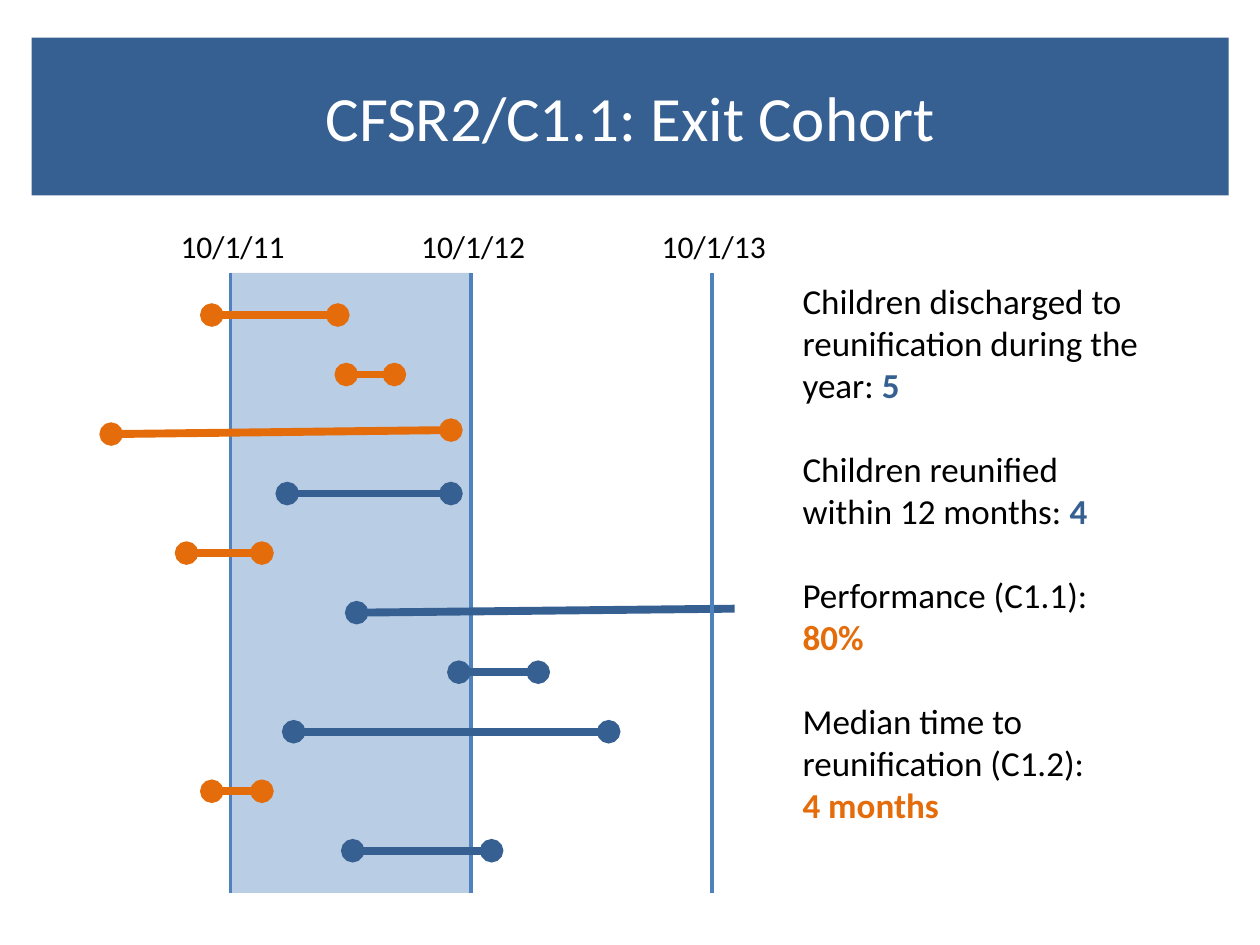
from lxml import etree
from pptx import Presentation
from pptx.dml.color import RGBColor
from pptx.enum import shapes, text
from pptx.oxml.ns import qn
from pptx.util import Cm, Pt

TITLE = "CFSR2/C1.1: Exit Cohort"
DATES = ["10/1/11", "10/1/12", "10/1/13"]

# One stay per row: start, end (cm), colour, rise at the end (cm), end is known
STAYS = [
    (4.27, 6.81, "orange", 0, True),
    (6.98, 7.95, "orange", 0, True),
    (2.24, 9.09, "orange", 0.08, True),
    (5.79, 9.09, "navy", 0, True),
    (3.76, 5.28, "orange", 0, True),
    (7.19, 14.81, "navy", 0.08, False),
    (9.25, 10.85, "navy", 0, True),
    (5.92, 12.27, "navy", 0, True),
    (4.27, 5.28, "orange", 0, True),
    (7.11, 9.91, "navy", 0, True),
]

# Label, value, value colour, starts a new group
FINDINGS = [
    ("Children discharged to reunification during the year: ", "5", "navy", False),
    ("Children reunified within 12 months: ", "4", "navy", True),
    ("Performance (C1.1): ", "80%", "orange", True),
    ("Median time to reunification (C1.2):", "", "orange", True),
    ("", "4 months", "orange", False),
]

THEME = {
    "font": "Calibri",
    "navy": RGBColor.from_string("376092"),
    "orange": RGBColor.from_string("E46C0A"),
    "band": RGBColor.from_string("B9CDE5"),
    "marker": RGBColor.from_string("4F81BD"),
    "black": RGBColor.from_string("000000"),
    "white": RGBColor.from_string("FFFFFF"),
    "title_size": Pt(36),
    "date_size": Pt(18),
    "body_size": Pt(20),
}

YEAR_LEFT, YEAR_WIDTH = 4.65, 4.85
CHART_TOP, CHART_HEIGHT = 5.5, 12.5
ROW_TOP, ROW_STEP = 6.35, 1.2
DATE_W, DATE_H = 2.64, 1.02


def set_font(target, size, color):
    target.font.name = THEME["font"]
    target.font.size = THEME[size]
    target.font.color.rgb = THEME[color]


def add_line(slide, x1, y1, x2, y2, color, width, ends=()):
    """Draw a line; ends lists the tags (headEnd, tailEnd) that get a dot."""
    line = slide.shapes.add_connector(
        shapes.MSO_CONNECTOR.STRAIGHT, Cm(x1), Cm(y1), Cm(x2), Cm(y2))
    line.line.color.rgb = THEME[color]
    line.line.width = Pt(width)
    ln = line.line._get_or_add_ln()
    for tag in ends:
        etree.SubElement(ln, qn("a:" + tag), type="oval")
    etree.SubElement(line._element.spPr, qn("a:effectLst"))


def add_title(slide):
    sp = slide.shapes.title
    sp.left, sp.top, sp.width, sp.height = Cm(0.64), Cm(0.76), Cm(24.13), Cm(3.18)
    sp.fill.solid()
    sp.fill.fore_color.rgb = THEME["navy"]
    tf = sp.text_frame
    tf.text = TITLE
    tf.vertical_anchor = text.MSO_ANCHOR.MIDDLE
    p = tf.paragraphs[0]
    p.alignment = text.PP_ALIGN.CENTER
    set_font(p, "title_size", "white")


def add_band(slide):
    sp = slide.shapes.add_shape(
        shapes.MSO_SHAPE.RECTANGLE,
        Cm(YEAR_LEFT), Cm(CHART_TOP), Cm(YEAR_WIDTH), Cm(CHART_HEIGHT))
    sp.shadow.inherit = False
    sp.fill.solid()
    sp.fill.fore_color.rgb = THEME["band"]
    sp.line.fill.background()


def add_date(slide, i):
    x = YEAR_LEFT + i * YEAR_WIDTH
    add_line(slide, x, CHART_TOP, x, CHART_TOP + CHART_HEIGHT, "marker", 2)
    box = slide.shapes.add_textbox(
        Cm(x - DATE_W / 2 + 0.04), Cm(4.45), Cm(DATE_W), Cm(DATE_H))
    tf = box.text_frame
    tf.word_wrap = False
    tf.auto_size = text.MSO_AUTO_SIZE.SHAPE_TO_FIT_TEXT
    p = tf.paragraphs[0]
    p.text = DATES[i]
    p.alignment = text.PP_ALIGN.CENTER
    set_font(p, "date_size", "black")


def add_stays(slide):
    for i, (start, end, color, rise, closed) in enumerate(STAYS):
        y = ROW_TOP + i * ROW_STEP
        ends = ("headEnd", "tailEnd") if closed else ("headEnd",)
        add_line(slide, start, y, end, y - rise, color, 4.5, ends)


def add_findings(slide):
    box = slide.shapes.add_textbox(Cm(15.93), Cm(5.5), Cm(7.37), Cm(11.38))
    tf = box.text_frame
    tf.word_wrap = True
    tf.auto_size = text.MSO_AUTO_SIZE.SHAPE_TO_FIT_TEXT
    for i, (label, value, color, new_group) in enumerate(FINDINGS):
        p = tf.add_paragraph() if i else tf.paragraphs[0]
        set_font(p, "body_size", "black")
        if new_group:
            p.space_before = Pt(24)
        if label:
            r = p.add_run()
            r.text = label
            set_font(r, "body_size", "black")
        if value:
            r = p.add_run()
            r.text = value
            r.font.bold = True
            set_font(r, "body_size", color)


def main():
    prs = Presentation()
    prs.slide_width, prs.slide_height = Cm(25.4), Cm(19.05)
    slide = prs.slides.add_slide(prs.slide_layouts[5])
    add_title(slide)
    add_band(slide)
    add_date(slide, 0)
    add_date(slide, 1)
    add_stays(slide)
    add_date(slide, 2)  # the last date line crosses over the open stay
    add_findings(slide)
    prs.save("out.pptx")


if __name__ == "__main__":
    main()
